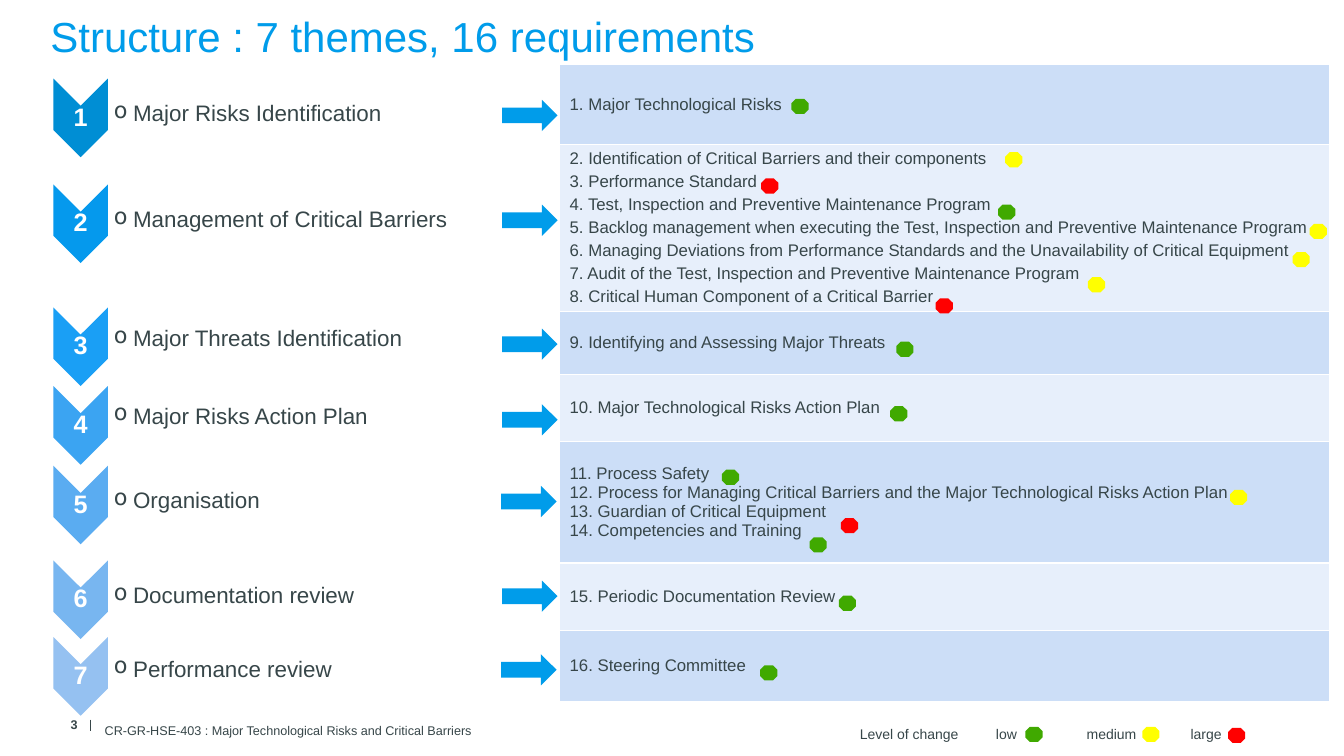
from lxml import etree
from pptx import Presentation
from pptx.dml.color import RGBColor
from pptx.enum import shapes, text
from pptx.oxml.ns import qn
from pptx.util import Pt

PX = 9144  # 100 px to the inch
INK, BLUE, WHITE = "374649", "009CEA", "FFFFFF"
LEVELS = {"low": "40A900", "medium": "FFFF00", "large": "FF0000"}
MIDDLE = text.MSO_ANCHOR.MIDDLE
ALIGN = text.PP_ALIGN


def px(length):
    return length * PX


def color(value):
    return RGBColor.from_string(value)


def add_xml(parent, tag, **attributes):
    return etree.SubElement(parent, qn(tag), {k: str(v) for k, v in attributes.items()})


def assign(target, values):
    for name, value in values.items():
        setattr(target, name, value)


class Slide:
    def __init__(self, deck):
        self.slide = deck.slides.add_slide(deck.slide_layouts[5])
        self.shapes = self.slide.shapes

    def fill_frame(self, frame, lines, size=12, ink=INK, bold=False, insets=(10, 5, 10, 5),
                   anchor=MIDDLE, bullet=None, tabs=(), **layout):
        """Set the frame's text; insets run left, top, right, bottom."""
        sides = ("margin_left", "margin_top", "margin_right", "margin_bottom")
        assign(frame, dict(zip(sides, map(px, insets)), word_wrap=True,
                           vertical_anchor=anchor, auto_size=text.MSO_AUTO_SIZE.NONE))
        self.paragraphs(frame, lines, size, ink, bold, bullet, tabs, layout)

    def paragraphs(self, frame, lines, size, ink, bold, bullet, tabs, layout):
        for index, line in enumerate(lines):
            paragraph = frame.add_paragraph() if index else frame.paragraphs[0]
            properties = paragraph._p.get_or_add_pPr()
            if bullet:
                properties.set("marL", str(px(19)))
                properties.set("indent", str(px(-19)))
                add_xml(properties, "a:buChar", char=bullet)
            if tabs:
                stops = add_xml(properties, "a:tabLst")
                for stop in tabs:
                    add_xml(stops, "a:tab", pos=px(stop), algn="l")
            assign(paragraph, layout)
            run = paragraph.add_run()
            run.text = line
            assign(run.font, {"name": "Arial", "size": Pt(size), "bold": bold})
            run.font.color.rgb = color(ink)

    def paint(self, shape, fill):
        shape.shadow.inherit = False
        shape.fill.solid()
        shape.fill.fore_color.rgb = color(fill)
        shape.line.fill.background()
        return shape

    def title(self, line, box, **style):
        heading = self.shapes.title
        assign(heading, dict(zip(("left", "top", "width", "height"), map(px, box))))
        self.fill_frame(heading.text_frame, [line], **style)

    def label(self, line, box, **style):
        holder = self.shapes.add_textbox(*map(px, box))
        self.fill_frame(holder.text_frame, [line], **style)

    def shape(self, kind, box, fill):
        return self.paint(self.shapes.add_shape(kind, *map(px, box)), fill)

    def outline(self, points, fill, line, **style):
        builder = self.shapes.build_freeform(*points[0], scale=PX)
        builder.add_line_segments(points[1:], close=True)
        outline = self.paint(builder.convert_to_shape(), fill)
        self.fill_frame(outline.text_frame, [line], line_spacing=0.9, **style)

    def rule(self, x, top, bottom):
        rule = self.shapes.add_connector(shapes.MSO_CONNECTOR.STRAIGHT,
                                         px(x), px(top), px(x), px(bottom))
        rule.line.color.rgb = color(INK)
        rule.line.width = Pt(1)
        add_xml(rule._element.spPr, "a:effectLst")

    def table(self, box, rows):
        """Each row is (height, fill, lines, space after)."""
        table = self.shapes.add_table(len(rows), 1, *map(px, box)).table
        assign(table, {"first_row": False, "horz_banding": False})
        for index, (height, fill, lines, after) in enumerate(rows):
            table.rows[index].height = px(height)
            cell = table.cell(index, 0)
            cell.vertical_anchor = MIDDLE
            self.borders(cell)
            if fill:
                cell.fill.solid()
                cell.fill.fore_color.rgb = color(fill)
            else:
                cell.fill.background()
            self.paragraphs(cell.text_frame, lines, 12, INK, False, None, (),
                            {"space_after": Pt(after)})

    def borders(self, cell):
        properties = cell._tc.get_or_add_tcPr()
        for side in "LRTB":
            edge = add_xml(properties, f"a:ln{side}", w=Pt(1))
            add_xml(add_xml(edge, "a:solidFill"), "a:srgbClr", val=WHITE)


# Themes: name, chevron top, label top, arrow left and top, chevron colour
THEMES = [
    ("Major Risks Identification", 78, 88, 498, 99, "008ED4"),
    ("Management of Critical Barriers", 183, 193, 498, 203, "0599ED"),
    ("Major Threats Identification", 305, 311, 498, 326, "1A9FF5"),
    ("Major Risks Action Plan", 383, 388, 498, 401, "3BA4F2"),
    ("Organisation", 462, 472, 497, 482, "5AACF1"),
    ("Documentation review", 556, 566, 498, 576, "78B6F0"),
    ("Performance review", 632, 639, 497, 649, "95C1F1"),
]

# Requirements per theme: row height, space after, then (name, level, marker left, top)
REQUIREMENTS = [
    (79, 0, [("Major Technological Risks", "low", 785, 98)]),
    (154, 3, [
        ("Identification of Critical Barriers and their components", "medium", 997, 151),
        ("Performance Standard", "large", 755, 177),
        ("Test, Inspection and Preventive Maintenance Program", "low", 990, 203),
        ("Backlog management when executing the Test, Inspection and Preventive "
         "Maintenance Program", "medium", 1299, 222),
        ("Managing Deviations from Performance Standards and the Unavailability of "
         "Critical Equipment", "medium", 1282, 250),
        ("Audit of the Test, Inspection and Preventive Maintenance Program",
         "medium", 1079, 275),
        ("Critical Human Component of a Critical Barrier", "large", 928, 296)]),
    (63, 0, [("Identifying and Assessing Major Threats", "low", 889, 339)]),
    (66, 0, [("Major Technological Risks Action Plan", "low", 883, 403)]),
    (121, 0, [
        ("Process Safety", "low", 716, 466),
        ("Process for Managing Critical Barriers and the Major Technological Risks "
         "Action Plan", "medium", 1220, 486),
        ("Guardian of Critical Equipment", "large", 834, 514),
        ("Competencies and Training", "low", 803, 533)]),
    (67, 0, [("Periodic Documentation Review", "low", 832, 591)]),
    (70, 0, [("Steering Committee", "low", 754, 660)]),
]
LEGEND = [("low", 1017, 721), ("medium", 1133, 721), ("large", 1218, 722)]


def main():
    deck = Presentation()
    assign(deck, {"slide_width": px(1333), "slide_height": px(750)})
    page = Slide(deck)

    # Title
    page.title("Structure : 7 themes, 16 requirements", (40, 4, 1063, 58), size=30,
               ink=BLUE, insets=(10, 5, 10, 2), anchor=text.MSO_ANCHOR.BOTTOM,
               alignment=ALIGN.LEFT)

    # Requirements table, below an empty head row
    rows, markers, number = [(44, None, [""], 0)], [], 0
    for index, (height, after, requirements) in enumerate(REQUIREMENTS):
        lines = []
        for name, *marker in requirements:
            number += 1
            lines.append(f"{number}. {name}")
            markers.append(marker)
        rows.append((height, ("CCDEF7", "E7EFFB")[index % 2], lines, after))
    page.table((555, 20, 764, 664), rows)

    # Themes: label, numbered chevron and arrow
    for number, (name, top, label_top, arrow_x, arrow_y, fill) in enumerate(THEMES, 1):
        label = [(99, 0), (505, 0), (511, 9), (511, 42), (505, 51), (99, 51)]
        page.outline([(x, label_top + y) for x, y in label], WHITE, name, size=16,
                     insets=(14, 4, 4, 4), bullet="o", alignment=ALIGN.LEFT)
        chevron = [(53, 0), (80, 27), (107, 0), (107, 51), (80, 78), (53, 51)]
        page.outline([(x, top + y) for x, y in chevron], fill, str(number), size=18,
                     ink=WHITE, bold=True, insets=(1, 29, 1, 29), alignment=ALIGN.CENTER)
        page.shape(shapes.MSO_SHAPE.RIGHT_ARROW, (arrow_x, arrow_y, 55, 31), BLUE)

    # Footer and legend text
    page.rule(90, 714, 725)
    page.label("3", (24, 705, 63, 28), size=9, bold=True, alignment=ALIGN.RIGHT)
    page.label("CR-GR-HSE-403 : Major Technological Risks and Critical Barriers",
               (94, 705, 639, 40), size=9)
    page.label("\t".join(["Level of change", *LEVELS]), (843, 715, 430, 27), size=10,
               anchor=text.MSO_ANCHOR.TOP, tabs=(135, 225, 328))

    # Level of change markers
    for level, left, top in markers + LEGEND:
        page.shape(shapes.MSO_SHAPE.OCTAGON, (left, top, 17, 15), LEVELS[level])

    deck.save("out.pptx")


if __name__ == "__main__":
    main()
